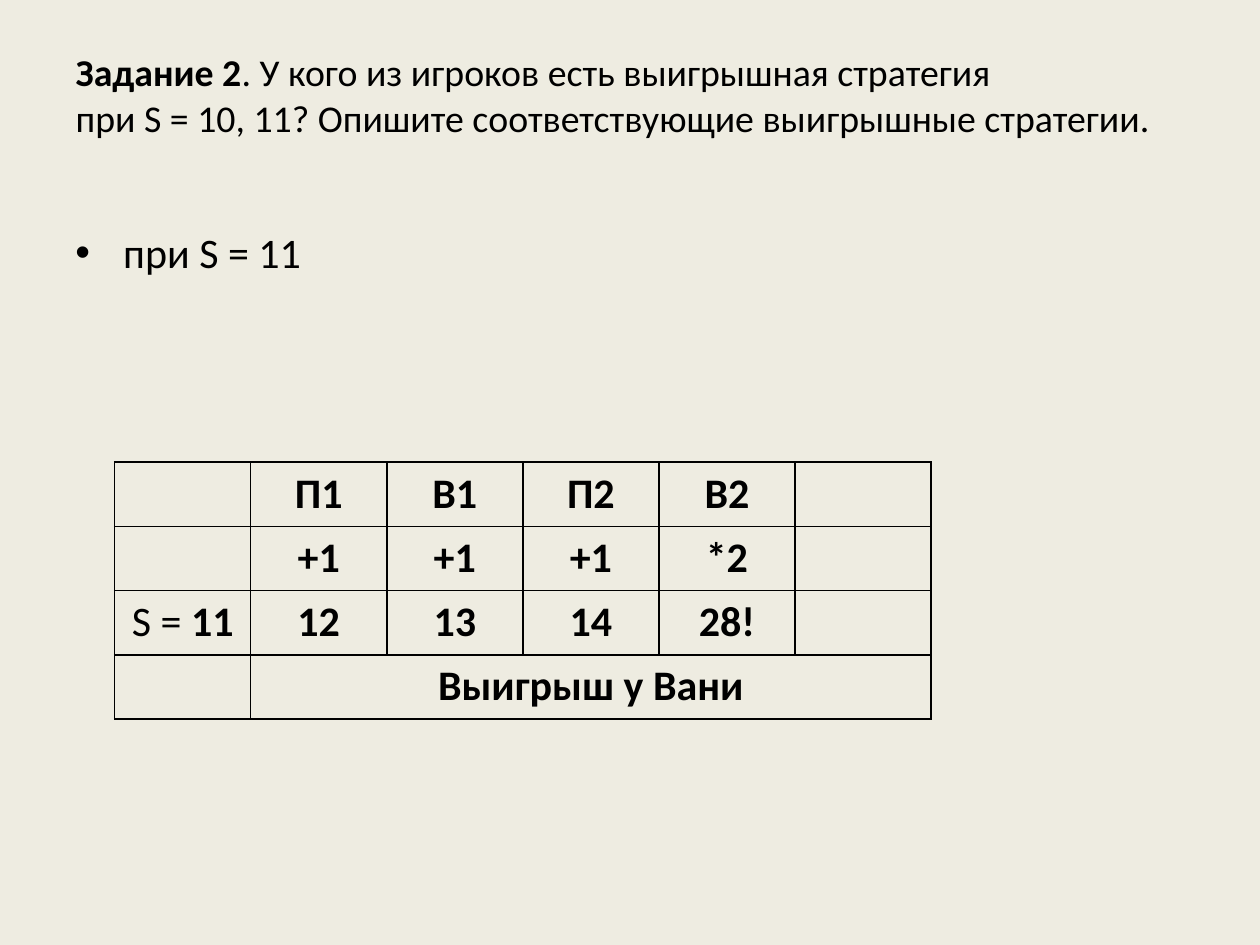
from lxml.etree import SubElement
from pptx import Presentation
from pptx.dml.color import RGBColor
from pptx.enum.text import MSO_ANCHOR, MSO_AUTO_SIZE, PP_ALIGN
from pptx.oxml.ns import qn
from pptx.util import Inches, Pt

COLORS = {"background": "EEECE1", "ink": "000000"}
TABLE_COLUMNS, TABLE_ROWS = 6, 4
COLUMN_WIDTH, ROW_HEIGHT = Inches(1.08), Inches(0.51)


def add_run(paragraph, text, size, bold=False):
    run = paragraph.add_run()
    run.text = text
    for name, value in {"name": "Calibri", "size": Pt(size), "bold": bold}.items():
        setattr(run.font, name, value)
    run.font.color.rgb = RGBColor.from_string(COLORS["ink"])


def draw_borders(cell):
    properties = cell._tc.get_or_add_tcPr()
    for position, side in enumerate(("lnL", "lnR", "lnT", "lnB")):
        line = properties.makeelement(qn(f"a:{side}"), {"w": str(Pt(1))})
        properties.insert(position, line)
        fill = SubElement(line, qn("a:solidFill"))
        SubElement(fill, qn("a:srgbClr"), val=COLORS["ink"])


presentation = Presentation()
presentation.slide_width, presentation.slide_height = Inches(10), Inches(7.5)
width, height = presentation.slide_width, presentation.slide_height
slide = presentation.slides.add_slide(presentation.slide_layouts[5])
slide.background.fill.solid()
slide.background.fill.fore_color.rgb = RGBColor.from_string(COLORS["background"])

title = slide.shapes.title
title_place = {"left": 0.05, "top": 0.04, "width": 0.9, "height": 1 / 6}
for name, share in title_place.items():
    setattr(title, name, int(share * (width if name in ("left", "width") else height)))
title_format = {
    "vertical_anchor": MSO_ANCHOR.TOP,
    "auto_size": MSO_AUTO_SIZE.NONE,
    "word_wrap": True,
    "margin_top": Inches(0.09),
}
for name, value in title_format.items():
    setattr(title.text_frame, name, value)
paragraph = title.text_frame.paragraphs[0]
paragraph.alignment = PP_ALIGN.LEFT
add_run(paragraph, "Задание 2", 21.6, True)
add_run(paragraph, ". У кого из игроков есть выигрышная стратегия", 21.6)
paragraph.add_line_break()
add_run(paragraph, "при S = 10, 11? Опишите соответствующие выигрышные стратегии.", 21.6)

start_value = slide.shapes.add_textbox(
    int(width * 0.05), int(height * 0.233), int(width * 0.9), int(height * 0.09)
)
start_value.text_frame.word_wrap = True
paragraph = start_value.text_frame.paragraphs[0]
paragraph.space_before = Pt(4.8)
properties = paragraph._p.get_or_add_pPr()
properties.set("marL", str(Inches(0.38)))
properties.set("indent", str(-Inches(0.38)))
SubElement(properties, qn("a:buFont"), typeface="Arial")
SubElement(properties, qn("a:buChar"), char="•")
add_run(paragraph, "при S = 11", 24)

moves = [
    ["", "П1", "В1", "П2", "В2", ""],
    ["", "+1", "+1", "+1", "*2", ""],
    ["S = 11", "12", "13", "14", "28!", ""],
    ["", "Выигрыш у Вани", "", "", "", ""],
]
table = slide.shapes.add_table(
    TABLE_ROWS, TABLE_COLUMNS, int(width * 0.091), int(height * 0.489),
    COLUMN_WIDTH * TABLE_COLUMNS, ROW_HEIGHT * TABLE_ROWS,
).table
for name in ("first_row", "horz_banding"):
    setattr(table, name, False)
for column in table.columns:
    column.width = COLUMN_WIDTH
for row, texts in zip(table.rows, moves):
    row.height = ROW_HEIGHT
    for cell, text in zip(row.cells, texts):
        cell.fill.background()
        draw_borders(cell)
        paragraph = cell.text_frame.paragraphs[0]
        paragraph.alignment = PP_ALIGN.CENTER
        label, equals, value = text.rpartition("= ")
        if equals:
            add_run(paragraph, label + equals, 24)
        if value:
            add_run(paragraph, value, 24, True)
table.cell(3, 1).merge(table.cell(3, 5))

presentation.save("out.pptx")
